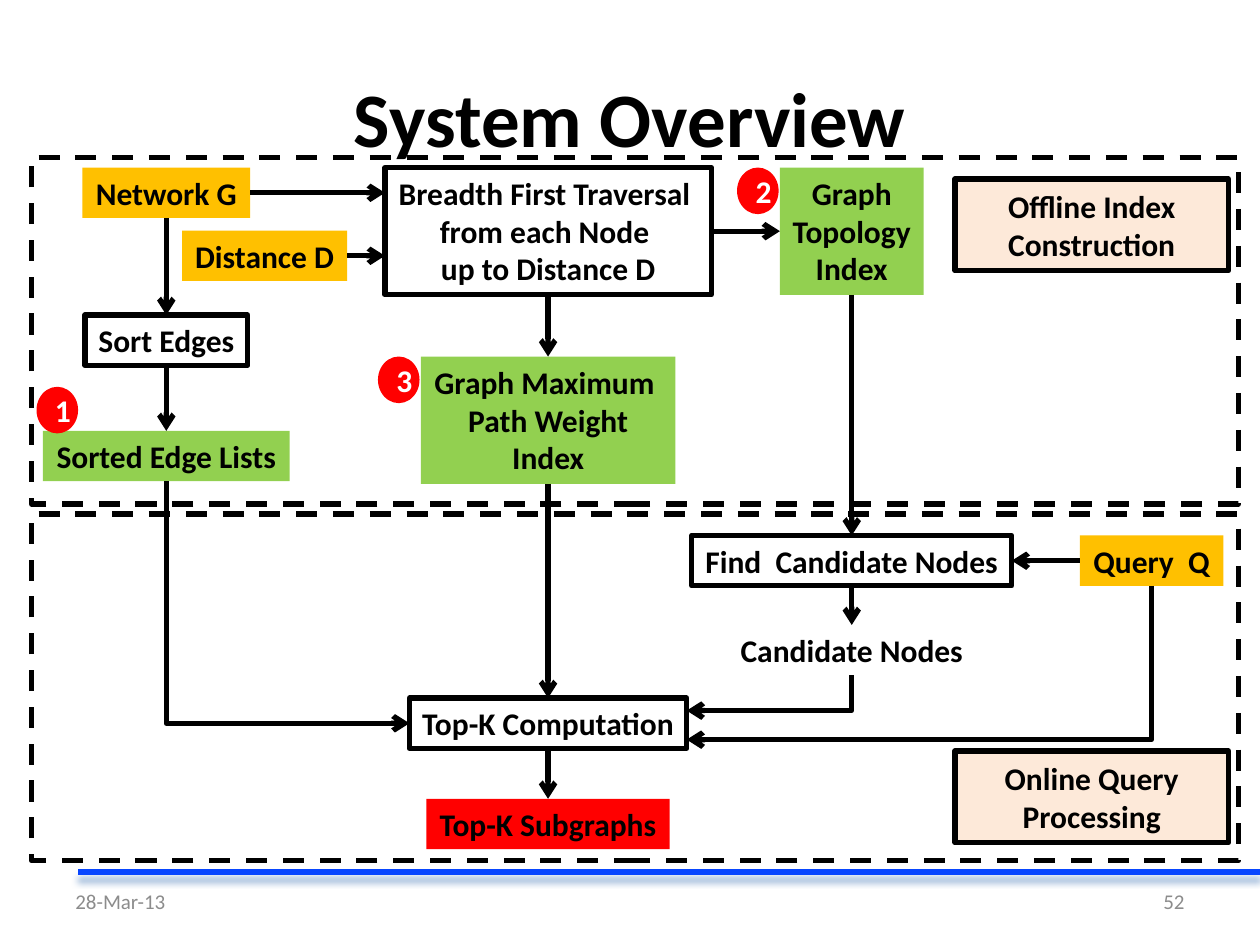
from lxml import etree
from pptx import Presentation
from pptx.dml.color import RGBColor
from pptx.enum.dml import MSO_LINE
from pptx.enum.shapes import MSO_CONNECTOR, MSO_SHAPE
from pptx.enum.text import MSO_ANCHOR, MSO_AUTO_SIZE, PP_ALIGN
from pptx.oxml.ns import qn
from pptx.util import Inches, Pt

RECT, OVAL = MSO_SHAPE.RECTANGLE, MSO_SHAPE.OVAL
STRAIGHT, ELBOW = MSO_CONNECTOR.STRAIGHT, MSO_CONNECTOR.ELBOW
LEFT, CENTER, RIGHT = PP_ALIGN.LEFT, PP_ALIGN.CENTER, PP_ALIGN.RIGHT
MIDDLE, TOP = MSO_ANCHOR.MIDDLE, MSO_ANCHOR.TOP
DASH = MSO_LINE.DASH
FIT = MSO_AUTO_SIZE.SHAPE_TO_FIT_TEXT

THEME = {
    "font": "Calibri", "title": 44, "body": 18, "footer": 12, "line": 3,
    "ink": "000000", "white": "FFFFFF", "muted": "8C8C8C",
    "input": "FFC000", "index": "92D050", "result": "FF0000",
    "phase": "FCD5B5", "rule": "0846FF", "glow": "95B3D7",
}

COL_1, COL_2, COL_3, COL_4 = 1.32, 4.35, 6.76, 9.14
ROW_HEIGHT = {1: 0.4, 3: 1.01}

NODES = {
    "network": (["Network G"], COL_1, 1.33, 1.33, "input"),
    "distance": (["Distance D"], 2.1, 1.83, 1.31, "input"),
    "traversal": (["Breadth First Traversal ", "from each Node ", "up to Distance D"],
                  COL_2, 1.33, 2.59, "step"),
    "topology": (["Graph", "Topology", "Index"], COL_3, 1.33, 1.14, "index"),
    "weight": (["Graph Maximum ", "Path Weight", "Index"], COL_2, 2.83, 2.02, "index"),
    "sort": (["Sort Edges"], COL_1, 2.5, 1.29, "step"),
    "lists": (["Sorted Edge Lists"], COL_1, 3.42, 1.96, "index"),
    "compute": (["Top-K Computation"], COL_2, 5.54, 2.2, "step"),
    "find": (["Find  Candidate Nodes"], COL_3, 4.25, 2.54, "step"),
    "candidates": (["Candidate Nodes"], COL_3, 4.96, 1.98, "plain"),
    "query": (["Query  Q"], COL_4, 4.25, 1.14, "input"),
    "subgraphs": (["Top-K Subgraphs"], COL_2, 6.34, 1.93, "result"),
}
DOWN = [
    ("network", "sort"), ("traversal", "weight"), ("sort", "lists"),
    ("topology", "find"), ("find", "candidates"), ("weight", "compute"),
    ("compute", "subgraphs"),
]
ACROSS = [
    ("network", "traversal"), ("distance", "traversal"),
    ("traversal", "topology"), ("query", "find"),
]
BENT = [("candidates", "compute", 5.64), ("query", "compute", 5.87),
        ("lists", "compute", 5.74)]
FRAMES = [1.25, 4.08]
PHASES = [("Offline Index Construction", 1.42), ("Online Query Processing", 5.96)]
BADGES = [("1", 0.29, 3.07), ("2", 5.85, 1.33), ("3", 3, 2.83)]


def color(key):
    return RGBColor.from_string(THEME[key])


def write(sp, lines, size="body", ink="ink", align=CENTER, anchor=MIDDLE,
          bold=True, wrap=True):
    tf = sp.text_frame
    tf.word_wrap = wrap
    tf.vertical_anchor = anchor
    for i, line in enumerate(lines):
        p = tf.add_paragraph() if i else tf.paragraphs[0]
        p.alignment = align
        r = p.add_run()
        r.text = line
        r.font.name = THEME["font"]
        r.font.size = Pt(THEME[size])
        r.font.bold = bold
        r.font.color.rgb = color(ink)


def add_box(slide, kind, at, fill=None, line=False):
    sp = slide.shapes.add_shape(kind, *map(Inches, at))
    sp.shadow.inherit = False
    if fill:
        sp.fill.solid()
        sp.fill.fore_color.rgb = color(fill)
    else:
        sp.fill.background()
    if line:
        sp.line.color.rgb = color("ink")
        sp.line.width = Pt(THEME["line"])
    else:
        sp.line.fill.background()
    return sp


def add_label(slide, text, at, **style):
    sp = slide.shapes.add_textbox(*map(Inches, at))
    write(sp, [text], **style)


def add_line(slide, start, end, kind=STRAIGHT, ink="ink", arrow=True):
    cxn = slide.shapes.add_connector(kind, *map(Inches, (*start, *end)))
    cxn.line.color.rgb = color(ink)
    cxn.line.width = Pt(THEME["line"])
    spPr = cxn._element.spPr
    if arrow:
        etree.SubElement(spPr.find(qn("a:ln")), qn("a:tailEnd"), type="arrow")
    etree.SubElement(spPr, qn("a:effectLst"))
    return cxn


def add_bent_arrow(slide, start, end):
    (x1, y1), (x2, y2) = start, end
    cx, cy = (x1 + x2) / 2, (y1 + y2) / 2
    half_w, half_h = (y2 - y1) / 2, abs(x2 - x1) / 2
    side = 1 if x2 < x1 else -1
    cxn = add_line(slide, (cx - side * half_w, cy - half_h),
                   (cx + side * half_w, cy + half_h), ELBOW)
    spPr = cxn._element.spPr
    spPr.find(qn("a:xfrm")).set("rot", str((90 if side > 0 else 270) * 60000))
    spPr.find(qn("a:prstGeom")).set("prst", "bentConnector2")


def add_rule(slide):
    rule = add_line(slide, (0.62, 6.92), (10, 6.92), ink="rule", arrow=False)
    effects = rule._element.spPr.find(qn("a:effectLst"))
    shadow = etree.SubElement(effects, qn("a:outerShdw"), blurRad=str(Pt(4)),
                              dist=str(Pt(4)), dir=str(90 * 60000))
    etree.SubElement(shadow, qn("a:srgbClr"), val=THEME["glow"])


def bounds(name):
    lines, cx, y, w, _ = NODES[name]
    return cx - w / 2, y, w, ROW_HEIGHT[len(lines)]


def facing_edge(name, toward):
    x, _, w, _ = bounds(name)
    return x + w if NODES[toward][1] > NODES[name][1] else x


def below(name):
    _, y, _, h = bounds(name)
    return NODES[name][1], y + h


def main():
    prs = Presentation()
    prs.slide_width, prs.slide_height = Inches(10), Inches(7.5)
    s = prs.slides.add_slide(prs.slide_layouts[6])

    add_label(s, "52", (7.17, 6.95, 2.33, 0.4), size="footer", ink="muted",
              align=RIGHT, bold=False)
    add_rule(s)
    add_label(s, "System Overview", (0.5, 0.3, 9, 1.25), size="title")
    add_label(s, "28-Mar-13", (0.5, 6.95, 2.33, 0.4), size="footer", ink="muted",
              align=LEFT, bold=False)

    for name, (lines, _, _, _, role) in NODES.items():
        if role == "plain":
            sp = s.shapes.add_textbox(*map(Inches, bounds(name)))
        else:
            step = role == "step"
            sp = add_box(s, RECT, bounds(name), None if step else role, step)
        write(sp, lines, anchor=TOP, wrap=False)
        sp.text_frame.auto_size = FIT

    for src, dst in ACROSS:
        _, y, _, h = bounds(src)
        add_line(s, (facing_edge(src, dst), y + h / 2),
                 (facing_edge(dst, src), y + h / 2))
    for src, dst in DOWN:
        add_line(s, below(src), (NODES[src][1], bounds(dst)[1]))
    for src, dst, y in BENT:
        add_bent_arrow(s, below(src), (facing_edge(dst, src), y))

    for y in FRAMES:
        frame = add_box(s, RECT, (0.25, y, 9.58, 2.75), line=True)
        frame.line.dash_style = DASH
    for text, y in PHASES:
        sp = add_box(s, RECT, (7.58, y, 2.17, 0.73), "phase", True)
        tint = sp._element.spPr.find(qn("a:solidFill"))[0]
        etree.SubElement(tint, qn("a:alpha"), val="50000")
        write(sp, [text])
    for text, x, y in BADGES:
        sp = add_box(s, OVAL, (x, y, 0.33, 0.37), "result")
        write(sp, [text], ink="white")

    prs.save("out.pptx")


if __name__ == "__main__":
    main()
